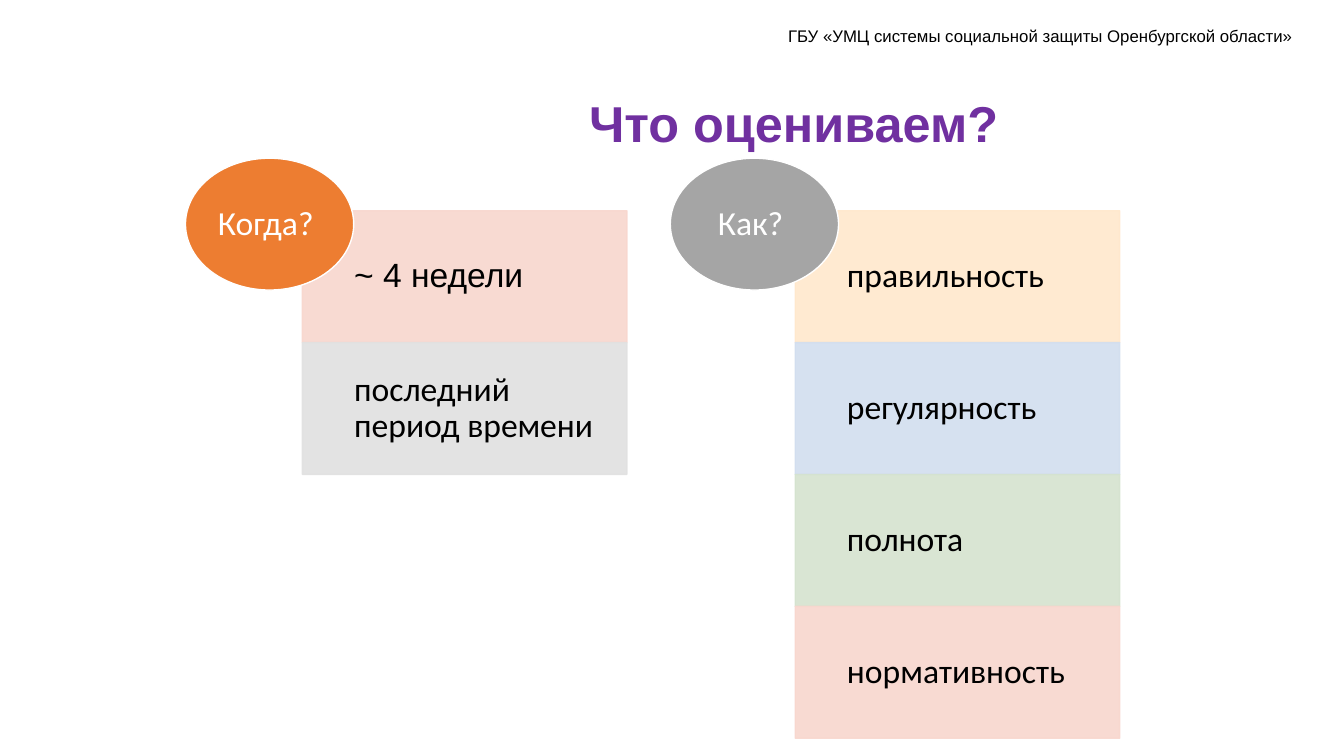
from dataclasses import dataclass

from lxml import etree
from pptx import Presentation
from pptx.dml.color import RGBColor
from pptx.enum.shapes import MSO_SHAPE
from pptx.enum.text import MSO_ANCHOR, PP_ALIGN
from pptx.oxml.ns import qn
from pptx.util import Pt

RECT, OVAL = MSO_SHAPE.RECTANGLE, MSO_SHAPE.OVAL
LEFT, MID = PP_ALIGN.LEFT, PP_ALIGN.CENTER
TOP, CENTER = MSO_ANCHOR.TOP, MSO_ANCHOR.MIDDLE


@dataclass(frozen=True)
class Theme:
    black: str = "000000"
    white: str = "FFFFFF"
    violet: str = "7030A0"
    orange: str = "ED7D31"
    gray: str = "A5A5A5"
    rose: str = "F8D7CE"
    silver: str = "E1E1E1"
    cream: str = "FFE8CC"
    blue: str = "D2DEEF"
    green: str = "D5E3CF"
    sans: str = "Arial"
    body: str = "Calibri"
    small: int = 12
    large: int = 24
    title: int = 36
    alpha: int = 90


THEME = Theme()


def write(shape, text, font, size, color, align=LEFT, anchor=CENTER,
          pads=(7.2, 3.6, 7.2, 3.6), bold=False, lead=0.9):
    frame = shape.text_frame
    frame.word_wrap = True
    frame.vertical_anchor = anchor
    (frame.margin_left, frame.margin_top,
     frame.margin_right, frame.margin_bottom) = map(Pt, pads)
    para = frame.paragraphs[0]
    para.text = text
    para.alignment = align
    para.line_spacing = lead
    para.font.name = font
    para.font.size = Pt(size)
    para.font.bold = bold
    para.font.color.rgb = RGBColor.from_string(color)


def draw(slide, kind, box, fill, line):
    shape = slide.shapes.add_shape(kind, *map(Pt, box))
    shape.shadow.inherit = False
    shape.fill.solid()
    shape.fill.fore_color.rgb = RGBColor.from_string(fill)
    shape.line.color.rgb = RGBColor.from_string(line)
    shape.line.width = Pt(1)
    return shape


def fade(shape, level):
    for color in shape.fill._xPr.iter(qn("a:srgbClr")):
        etree.SubElement(color, qn("a:alpha")).set("val", str(level * 1000))


def header(slide, box):
    label = slide.shapes.add_textbox(*map(Pt, box))
    write(label, "ГБУ «УМЦ системы социальной защиты Оренбургской области»",
          THEME.sans, THEME.small, THEME.black, anchor=TOP, lead=1.0)


def title(slide, box):
    label = slide.shapes.add_textbox(*map(Pt, box))
    write(label, "Что оцениваем?", THEME.sans, THEME.title, THEME.violet,
          align=MID, bold=True)


def column(slide, box, shift, name, color, rows):
    left, top, width, height = box
    for index, (text, fill, font) in enumerate(rows):
        place = (left, top + index * height, width, height)
        cell = draw(slide, RECT, place, fill, fill)
        fade(cell, THEME.alpha)
        write(cell, text, font, THEME.large, THEME.black,
              pads=(37, 13.7, 13.7, 13.7))
    badge = draw(slide, OVAL, (left - shift, top - 37.5, 120.2, height),
                 color, THEME.white)
    write(badge, name, THEME.body, THEME.large, THEME.white, align=MID,
          pads=(0, 0, 0, 0))


def main():
    deck = Presentation()
    deck.slide_width, deck.slide_height = Pt(960), Pt(540)
    slide = deck.slides.add_slide(deck.slide_layouts[6])
    header(slide, (555.8, 15.1, 387.4, 21.6))
    title(slide, (218.9, 46.8, 696.2, 86.4))
    column(slide, (216, 150.5, 231.8, 94.2), 83.5, "Когда? ", THEME.orange, [
        ("~ 4 недели", THEME.rose, THEME.sans),
        ("последний период времени", THEME.silver, THEME.body),
    ])
    column(slide, (568, 150.5, 231.8, 94.2), 89.2, "Как? ", THEME.gray, [
        ("правильность", THEME.cream, THEME.body),
        ("регулярность", THEME.blue, THEME.body),
        ("полнота", THEME.green, THEME.body),
        ("нормативность", THEME.rose, THEME.body),
    ])
    deck.save("out.pptx")


if __name__ == "__main__":
    main()
